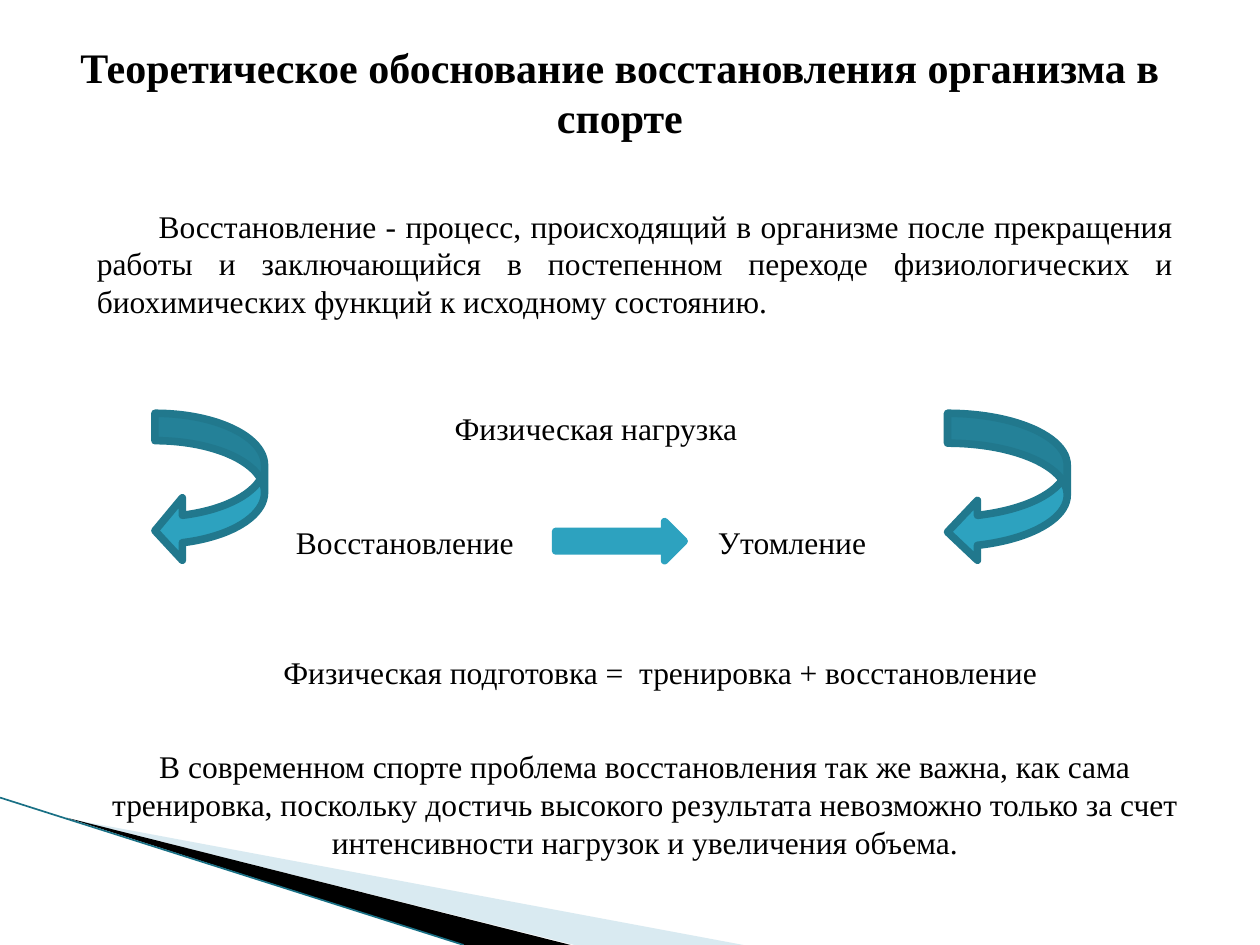
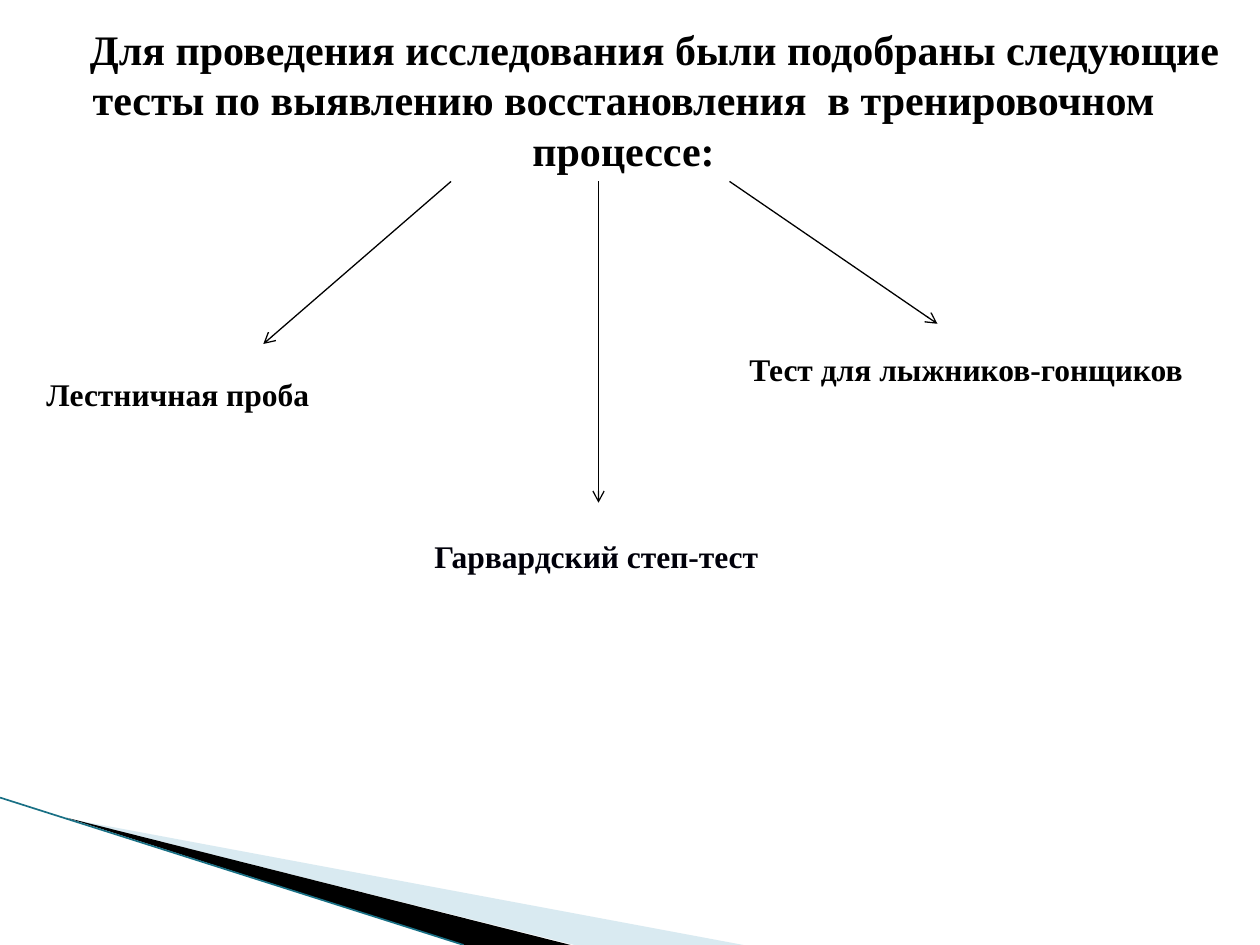
from pptx import Presentation, util as u
from pptx.dml.color import RGBColor
from pptx.enum import shapes, text
from pptx.oxml import ns
from lxml import etree

FONT = "Times New Roman"
BLACK, TEAL, DARK_TEAL, EDGE, PALE = "000000", "2DA2BF", "21788D", "197085", "A0CBDC"
CENTER, JUSTIFY, LEFT = text.PP_ALIGN.CENTER, text.PP_ALIGN.JUSTIFY, text.PP_ALIGN.LEFT


def rgb(value):
    return RGBColor.from_string(value)


def add_text(s, content, box, size=18, bold=False, color=BLACK, align=LEFT,
             anchor=text.MSO_ANCHOR.TOP, indent=0):
    tf = s.shapes.add_textbox(*map(u.Inches, box)).text_frame
    tf.word_wrap = True
    tf.vertical_anchor = anchor
    p = tf.paragraphs[0]
    p.alignment = align
    if indent:
        p._p.get_or_add_pPr().set("indent", str(u.Inches(indent)))
    r = p.add_run()
    r.text = content
    r.font.name, r.font.size, r.font.bold = FONT, u.Pt(size), bold
    r.font.color.rgb = rgb(color)


prs = Presentation()
prs.slide_width, prs.slide_height = u.Inches(10), u.Inches(7.5)
theory, tests = [prs.slides.add_slide(prs.slide_layouts[6]) for _ in range(2)]

wedges = [
    (PALE, 40, [(0.55, 6.5), (5.9, 7.5), (4.56, 7.5)]),
    (BLACK, 100, [(0.53, 6.49), (4.53, 7.5), (3.68, 7.5)]),
]
edge = ((0, 6.33), (3.68, 7.5), EDGE, 0.95, False)
arrows = [
    (start, end, BLACK, 0.75, True)
    for start, end in [
        ((3.58, 1.44), (2.09, 2.73)),
        ((5.79, 1.44), (7.44, 2.57)),
        ((4.75, 1.44), (4.75, 3.99)),
    ]
]

for s, lines in [(theory, [edge]), (tests, [edge] + arrows)]:
    for color, alpha, points in wedges:
        corners = [(u.Inches(x), u.Inches(y)) for x, y in points]
        fb = s.shapes.build_freeform(*corners[0])
        fb.add_line_segments(corners[1:], close=True)
        sp = fb.convert_to_shape()
        sp.shadow.inherit = False
        sp.fill.solid()
        sp.fill.fore_color.rgb = rgb(color)
        sp.line.fill.background()
        if alpha < 100:
            clr = sp.fill._xPr.find(".//" + ns.qn("a:srgbClr"))
            etree.SubElement(clr, ns.qn("a:alpha")).set("val", str(alpha * 1000))
    for start, end, color, width, head in lines:
        cx = s.shapes.add_connector(shapes.MSO_CONNECTOR.STRAIGHT,
                                    *map(u.Inches, start + end))
        cx.line.color.rgb = rgb(color)
        cx.line.width = u.Pt(width)
        if head:
            etree.SubElement(cx.line._get_or_add_ln(), ns.qn("a:tailEnd")).set("type", "arrow")
        etree.SubElement(cx._element.spPr, ns.qn("a:effectLst"))

add_text(theory, "Теоретическое обоснование восстановления организма в спорте",
         (0.51, 0.28, 8.82, 1.27), size=24, bold=True, align=CENTER)
add_text(theory, "Восстановление - процесс, происходящий в организме после прекращения работы "
         "и заключающийся в постепенном переходе физиологических и биохимических функций "
         "к исходному состоянию.",
         (0.67, 1.59, 8.74, 0.98), align=JUSTIFY, indent=0.49)

for content, left, top, width in [
    ("Физическая нагрузка", 3.51, 3.2, 2.6),
    ("Восстановление", 2.25, 4.1, 2.1),
    ("Утомление", 5.6, 4.1, 1.6),
]:
    add_text(theory, content, (left, top, width, 0.4))

for kind, box, line, adj in [
    (shapes.MSO_SHAPE.RIGHT_ARROW, (4.41, 4.14, 1.02, 0.31), TEAL, []),
    (shapes.MSO_SHAPE.CURVED_LEFT_ARROW, (1.23, 3.28, 0.87, 1.18), DARK_TEAL, [0.25, 0.57, 0.25]),
    (shapes.MSO_SHAPE.CURVED_LEFT_ARROW, (7.52, 3.28, 0.95, 1.18), DARK_TEAL, [0.25, 0.5, 0.25]),
]:
    sp = theory.shapes.add_shape(kind, *map(u.Inches, box))
    sp.shadow.inherit = False
    for i, value in enumerate(adj):
        sp.adjustments[i] = value
    sp.fill.solid()
    sp.fill.fore_color.rgb = rgb(TEAL)
    sp.line.color.rgb = rgb(line)
    sp.line.width = u.Pt(4.33)

add_text(theory, "Физическая подготовка =  тренировка + восстановление",
         (1.66, 5.14, 6.85, 0.39), align=JUSTIFY, indent=0.49, anchor=text.MSO_ANCHOR.MIDDLE)
add_text(theory, "В современном спорте проблема восстановления так же важна, как сама тренировка, "
         "поскольку достичь высокого результата невозможно только за счет интенсивности "
         "нагрузок и увеличения объема.",
         (0.59, 5.88, 9.06, 0.97), align=CENTER)

add_text(tests, "Для проведения исследования были подобраны следующие тесты по выявлению "
         "восстановления  в тренировочном процессе:",
         (-0.05, 0.15, 10, 1.27), size=24, bold=True, align=CENTER, indent=0.49,
         anchor=text.MSO_ANCHOR.MIDDLE)
for content, box, color in [
    ("Лестничная проба", (0.27, 2.93, 3.62, 0.4), BLACK),
    ("Гарвардский степ-тест", (3.35, 4.21, 2.84, 0.39), "00000A"),
    ("Тест для лыжников-гонщиков", (5.85, 2.73, 3.77, 0.39), BLACK),
]:
    add_text(tests, content, box, bold=True, color=color)

prs.save("out.pptx")
